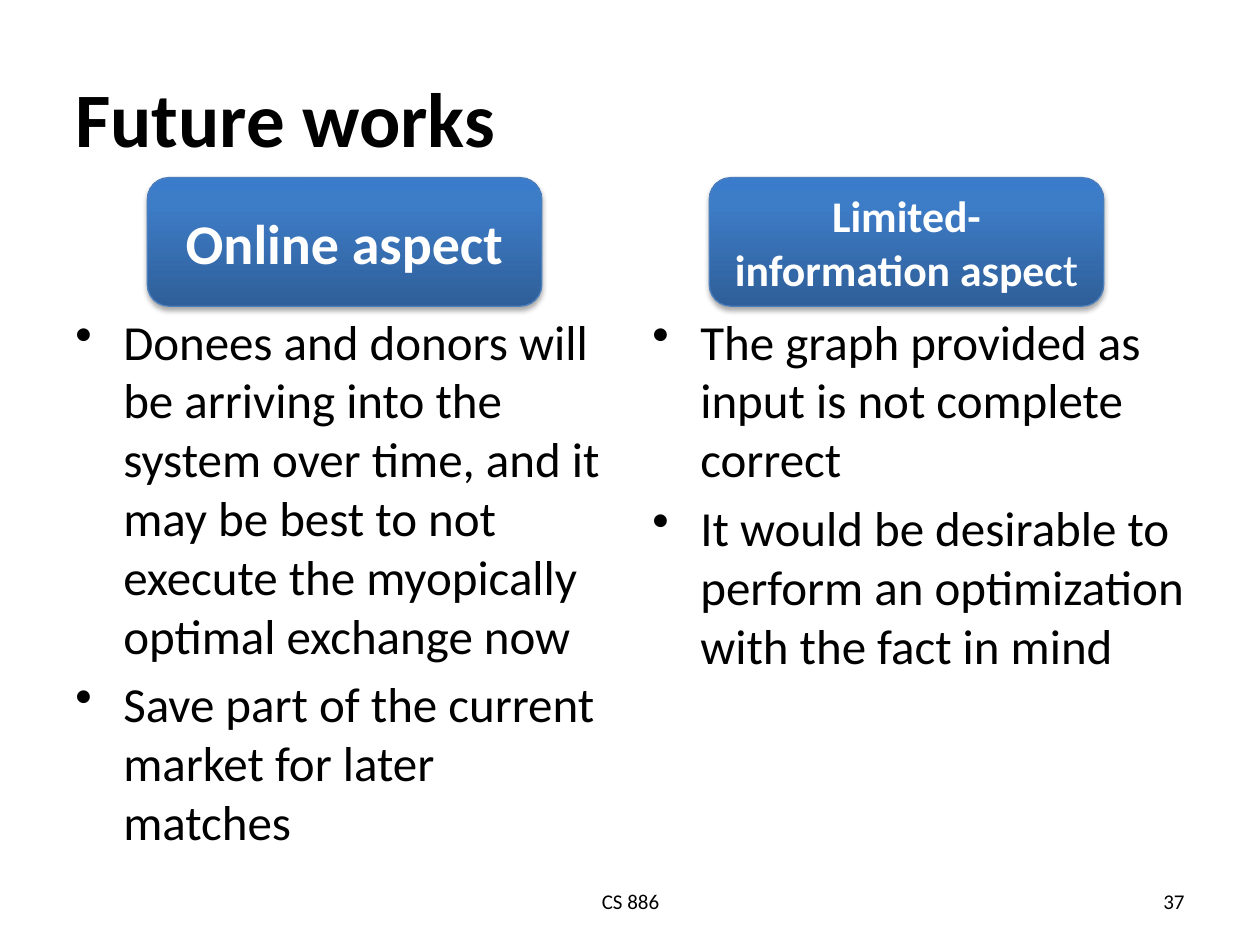
import copy

import pptx
import pptx.dml.color
import pptx.enum.shapes
import pptx.enum.text
import pptx.oxml
import pptx.oxml.ns
import pptx.util

Inches = pptx.util.Inches
Pt = pptx.util.Pt
qn = pptx.oxml.ns.qn
Align = pptx.enum.text.PP_ALIGN
Anchor = pptx.enum.text.MSO_ANCHOR

BADGE_GRADIENT = [(0, "2F5F99"), (0.8, "3D7CC7"), (1, "3A7CCB")]
BADGE_SHADOW = (
    f'<a:outerShdw {pptx.oxml.ns.nsdecls("a")} blurRad="40000" dist="23000" '
    'dir="5400000" rotWithShape="0">'
    '<a:srgbClr val="000000"><a:alpha val="35000"/></a:srgbClr></a:outerShdw>'
)

COLUMNS = [
    {
        "badge_left": 1.17,
        "badge_runs": [("Online aspect", 32, True)],
        "list_left": 0.5,
        "list_height": 4.3,
        "points": [
            "Donees and donors will be arriving into the system over time, and it "
            "may be best to not execute the myopically optimal exchange now",
            "Save part of the current market for later matches",
        ],
    },
    {
        "badge_left": 5.63,
        "badge_runs": [("Limited-information aspec", 25, True), ("t", 26, False)],
        "list_left": 5.08,
        "list_height": 3.97,
        "points": [
            "The graph provided as input is not complete correct",
            "It would be desirable to perform an optimization with the fact in mind",
        ],
    },
]


def color(hex_string):
    return pptx.dml.color.RGBColor.from_string(hex_string)


class SlideBuilder:
    font_name = "Calibri"
    text_color = "000000"
    badge_text_color = "FFFFFF"
    badge_line_color = "4B7EBC"

    def __init__(self, slide):
        self.slide = slide

    def style(self, font, size, hex_string, bold=False):
        font.name = self.font_name
        font.size = Pt(size)
        font.bold = bold
        font.color.rgb = color(hex_string)

    def text_frame(self, left, top, width, height, anchor):
        box = self.slide.shapes.add_textbox(
            Inches(left), Inches(top), Inches(width), Inches(height))
        frame = box.text_frame
        frame.word_wrap = True
        frame.vertical_anchor = anchor
        return frame

    def label(self, text, left, top, width, height, size, align, bold=False):
        frame = self.text_frame(left, top, width, height, Anchor.MIDDLE)
        paragraph = frame.paragraphs[0]
        paragraph.text = text
        paragraph.alignment = align
        self.style(paragraph.font, size, self.text_color, bold)

    def bullet_list(self, points, left, top, width, height, size=28):
        frame = self.text_frame(left, top, width, height, Anchor.TOP)
        for index, point in enumerate(points):
            paragraph = frame.add_paragraph() if index else frame.paragraphs[0]
            paragraph.text = point
            paragraph.space_before = Pt(0.2 * size)
            self.style(paragraph.font, size, self.text_color)
            properties = paragraph._p.get_or_add_pPr()
            properties.set("marL", str(Inches(0.38)))
            properties.set("indent", str(-Inches(0.38)))
            bullet = pptx.oxml.parse_xml(
                f'<a:buChar {pptx.oxml.ns.nsdecls("a")} char="•"/>')
            properties.insert_element_before(bullet, "a:tabLst", "a:defRPr", "a:extLst")

    def badge(self, runs, left, top, width, height):
        """Add a rounded heading with a vertical gradient and a soft shadow."""
        shape = self.slide.shapes.add_shape(
            pptx.enum.shapes.MSO_SHAPE.ROUNDED_RECTANGLE,
            Inches(left), Inches(top), Inches(width), Inches(height))
        shape.fill.gradient()
        shape.fill.gradient_angle = 90
        properties = shape._element.spPr
        stop_list = properties.find(qn("a:gradFill")).find(qn("a:gsLst"))
        stop_list.append(copy.deepcopy(stop_list[-1]))
        for stop, (position, hex_string) in zip(shape.fill.gradient_stops, BADGE_GRADIENT):
            stop.position = position
            stop.color.rgb = color(hex_string)
        shape.line.color.rgb = color(self.badge_line_color)
        shape.line.width = Pt(0.75)
        shape.shadow.inherit = False
        properties.find(qn("a:effectLst")).append(pptx.oxml.parse_xml(BADGE_SHADOW))

        frame = shape.text_frame
        frame.word_wrap = True
        frame.vertical_anchor = Anchor.MIDDLE
        paragraph = frame.paragraphs[0]
        paragraph.alignment = Align.CENTER
        for text, size, bold in runs:
            run = paragraph.add_run()
            run.text = text
            self.style(run.font, size, self.badge_text_color, bold)


def main():
    presentation = pptx.Presentation()
    presentation.slide_width = Inches(10)
    presentation.slide_height = Inches(7.5)
    builder = SlideBuilder(presentation.slides.add_slide(presentation.slide_layouts[6]))

    builder.label("Future works", 0.5, 0.3, 9, 1.25, 44, Align.LEFT, bold=True)
    for column in COLUMNS:
        builder.bullet_list(
            column["points"], column["list_left"], 2.42, 4.42, column["list_height"])
        builder.badge(column["badge_runs"], column["badge_left"], 1.41, 3.13, 1.02)
    builder.label("CS 886", 3.42, 6.95, 3.17, 0.4, 12, Align.CENTER)
    builder.label("37", 7.17, 6.95, 2.33, 0.4, 12, Align.RIGHT)

    presentation.save("out.pptx")


if __name__ == "__main__":
    main()
